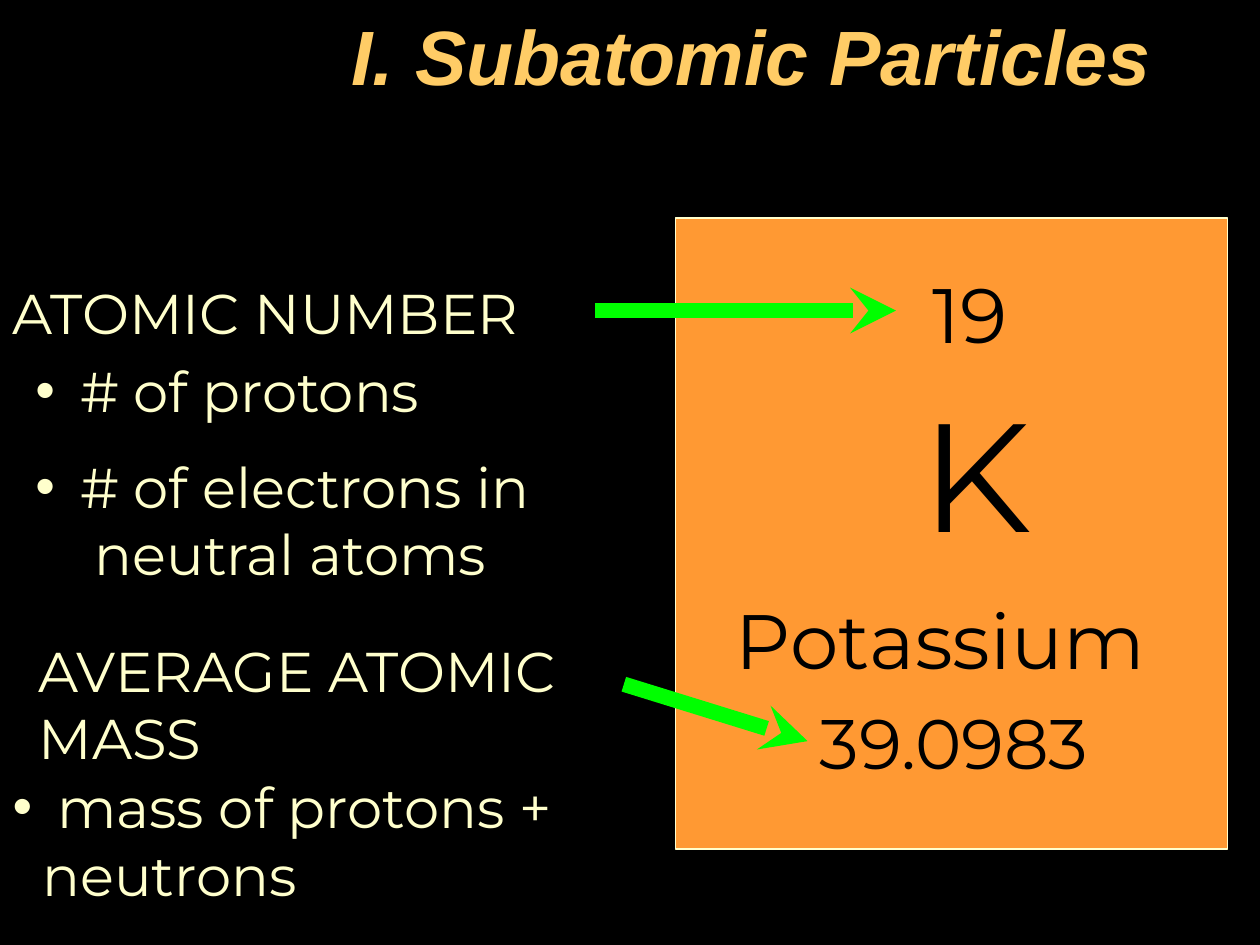
from dataclasses import dataclass

import pptx
import pptx.dml.color
import pptx.enum.shapes
import pptx.enum.text
import pptx.oxml.ns
import pptx.util
from lxml import etree

Pt = pptx.util.Pt
RGBColor = pptx.dml.color.RGBColor
ALIGN = pptx.enum.text.PP_ALIGN
ANCHOR = pptx.enum.text.MSO_ANCHOR
qn = pptx.oxml.ns.qn

BLACK = RGBColor(0x00, 0x00, 0x00)
GOLD = RGBColor(0xFF, 0xCC, 0x66)
ORANGE = RGBColor(0xFF, 0x99, 0x33)
CREAM = RGBColor(0xFF, 0xFF, 0xCC)
GREEN = RGBColor(0x00, 0xFF, 0x00)


@dataclass
class Box:
    x: float
    y: float
    w: float
    h: float


@dataclass
class Label:
    text: str
    box: Box
    size: float = 32
    color: RGBColor = CREAM
    align: ALIGN = ALIGN.LEFT


@dataclass
class BulletList:
    items: list[str]
    box: Box
    hang: float


@dataclass
class Arrow:
    x1: float
    y1: float
    x2: float
    y2: float


LABELS = [
    Label("19", Box(504, 149, 101, 60), 44, BLACK, ALIGN.CENTER),
    Label("K", Box(502, 212.5, 111.5, 113), 88, BLACK, ALIGN.CENTER),
    Label("Potassium", Box(413.5, 335, 271.5, 60), 44, BLACK),
    Label("39.0983", Box(461.5, 396, 199, 55.5), 40, BLACK),
    Label("ATOMIC NUMBER", Box(0, 155.5, 404.5, 45.5)),
    Label("AVERAGE ATOMIC MASS", Box(15, 360, 350, 84)),
]
LISTS = [
    BulletList(["# of protons", "# of electrons in\v neutral atoms"],
               Box(13, 200, 404.5, 142), 25.5),
    BulletList([" mass of protons + neutrons"], Box(0, 438, 404.5, 84), 17),
]
ARROWS = [Arrow(340, 177.5, 512, 177.5), Arrow(356.5, 391, 461.5, 423.5)]


def place(sp, box: Box) -> None:
    sp.left, sp.top, sp.width, sp.height = map(Pt, (box.x, box.y, box.w, box.h))


def write(tf, lines: list[str], *, size: float, color: RGBColor,
          font: str = "Montserrat", align: ALIGN = ALIGN.LEFT,
          anchor: ANCHOR = ANCHOR.TOP, bold: bool = False,
          italic: bool = False, hang: float = 0) -> None:
    tf.word_wrap = True
    tf.auto_size = pptx.enum.text.MSO_AUTO_SIZE.NONE
    tf.vertical_anchor = anchor
    for i, line in enumerate(lines):
        p = tf.paragraphs[0] if i == 0 else tf.add_paragraph()
        p.text = line
        p.alignment = align
        p.space_before = Pt(16.5 if i else 0)
        for r in p.runs:
            r.font.name, r.font.size = font, Pt(size)
            r.font.bold, r.font.italic = bold, italic
            r.font.color.rgb = color
        if hang:
            pPr = p._p.get_or_add_pPr()
            pPr.set("marL", str(Pt(hang)))
            pPr.set("indent", str(-Pt(hang)))
            etree.SubElement(pPr, qn("a:buFont")).set("typeface", "Arial")
            etree.SubElement(pPr, qn("a:buChar")).set("char", "•")


def add_label(s, label: Label) -> None:
    sp = s.shapes.add_textbox(0, 0, 0, 0)
    place(sp, label.box)
    write(sp.text_frame, [label.text], size=label.size, color=label.color,
          align=label.align)


def add_arrow(s, arrow: Arrow) -> None:
    ends = map(Pt, (arrow.x1, arrow.y1, arrow.x2, arrow.y2))
    sp = s.shapes.add_connector(pptx.enum.shapes.MSO_CONNECTOR.STRAIGHT, *ends)
    sp.line.color.rgb = GREEN
    sp.line.width = Pt(8.75)
    etree.SubElement(sp.line._get_or_add_ln(), qn("a:tailEnd")).set("type", "stealth")
    etree.SubElement(sp._element.spPr, qn("a:effectLst"))


def add_card(s, box: Box) -> None:
    sp = s.shapes.add_shape(pptx.enum.shapes.MSO_SHAPE.RECTANGLE, 0, 0, 0, 0)
    place(sp, box)
    sp.shadow.inherit = False
    sp.fill.solid()
    sp.fill.fore_color.rgb = ORANGE
    sp.line.color.rgb = CREAM
    sp.line.width = Pt(1)


def main() -> None:
    prs = pptx.Presentation()
    prs.slide_width, prs.slide_height = Pt(720), Pt(540)
    s = prs.slides.add_slide(prs.slide_layouts[3])
    s.background.fill.solid()
    s.background.fill.fore_color.rgb = BLACK

    title, *bodies = s.placeholders
    place(title, Box(53.5, 12, 612, 49))
    write(title.text_frame, ["I. Subatomic Particles"], size=44, color=GOLD,
          font="Arial", align=ALIGN.RIGHT, anchor=ANCHOR.BOTTOM,
          bold=True, italic=True)
    for sp, bullets in zip(bodies, LISTS):
        place(sp, bullets.box)
        write(sp.text_frame, bullets.items, size=32, color=CREAM,
              hang=bullets.hang)

    add_card(s, Box(386, 124.5, 315.5, 360.5))
    for label in LABELS:
        add_label(s, label)
    for arrow in ARROWS:
        add_arrow(s, arrow)
    prs.save("out.pptx")


if __name__ == "__main__":
    main()
